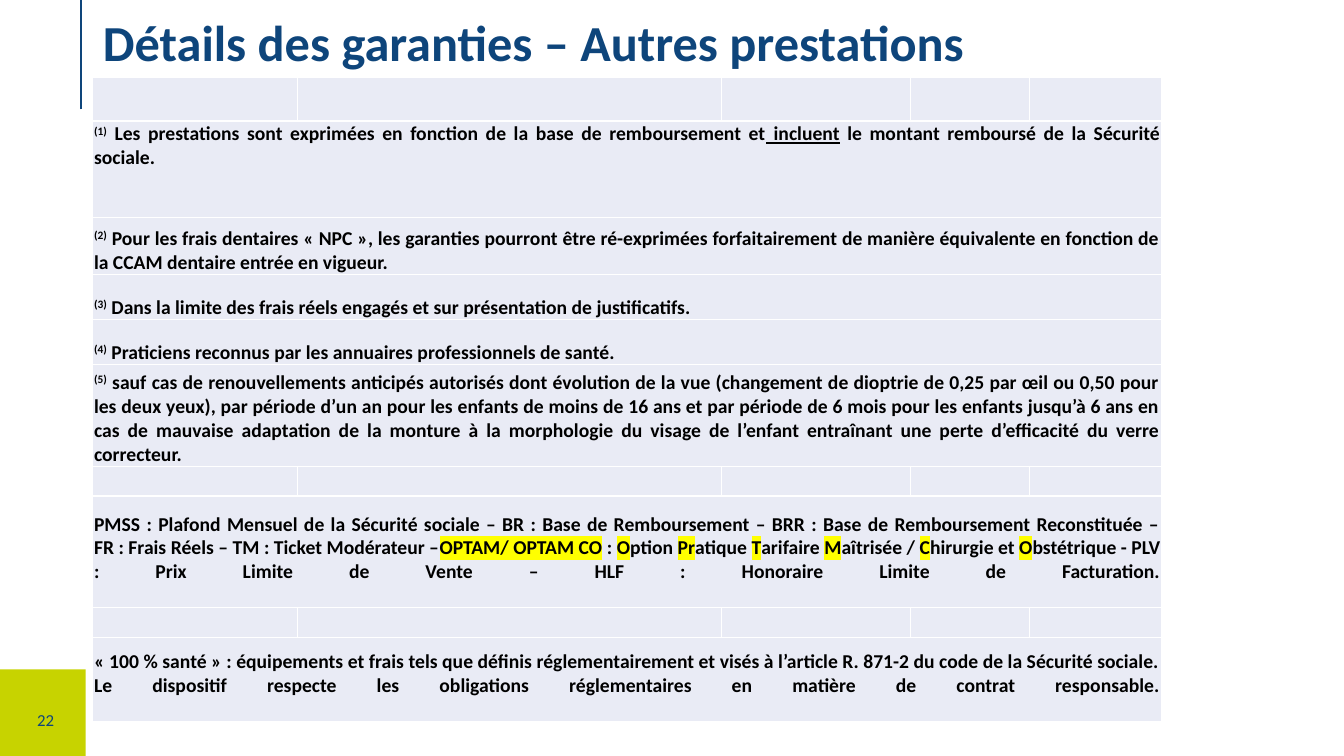
from copy import deepcopy
from lxml import etree
from pptx import Presentation
from pptx import util as u
from pptx.dml.color import RGBColor
from pptx.enum import shapes, text
from pptx.oxml.ns import qn

NAVY = RGBColor(0x0E, 0x45, 0x7B)
LIME = RGBColor(0xC7, 0xD3, 0x00)
PALE = RGBColor(0xE9, 0xEB, 0xF5)
BLACK = RGBColor(0, 0, 0)
WHITE = RGBColor(0xFF, 0xFF, 0xFF)
YELLOW = RGBColor(0xFF, 0xFF, 0)


def write(p, content, size=14, color=BLACK, bold=True, underline=None, base=None, highlight=None):
    """Add formatted text to a paragraph; each newline becomes a line break."""
    for i, line in enumerate(content.split("\n")):
        if i:
            p.add_line_break()
            p._p[-1].append(deepcopy(r._r.rPr))
        if not line:
            continue
        r = p.add_run()
        r.text = line
        f = r.font
        f.size, f.bold, f.underline = u.Pt(size), bold, underline
        f.color.rgb = color
        if base:
            r._r.rPr.set("baseline", str(base * 1000))
        if highlight:
            mark = etree.SubElement(r._r.rPr, qn("a:highlight"))
            etree.SubElement(mark, qn("a:srgbClr"), val=str(highlight))
        f.name = "Calibri"


def style_cell(cell):
    """Give a cell white 1 pt borders and the pale fill."""
    tcPr = cell._tc.get_or_add_tcPr()
    for side in ("a:lnL", "a:lnR", "a:lnT", "a:lnB"):
        ln = etree.SubElement(tcPr, qn(side), w=str(u.Pt(1)))
        fill = etree.SubElement(ln, qn("a:solidFill"))
        etree.SubElement(fill, qn("a:srgbClr"), val=str(WHITE))
    cell.fill.solid()
    cell.fill.fore_color.rgb = PALE
    cell.margin_left = cell.margin_right = cell.margin_top = u.Cm(0.03)
    cell.margin_bottom = 0


prs = Presentation()
prs.slide_width, prs.slide_height = u.Cm(33.87), u.Cm(19.05)
s = prs.slides.add_slide(prs.slide_layouts[5])

# Page marker and title rule
sp = s.shapes.add_shape(shapes.MSO_SHAPE.RECTANGLE, u.Cm(-0.03), u.Cm(16.87), u.Cm(2.19), u.Cm(2.18))
sp.shadow.inherit = False
sp.fill.solid()
sp.fill.fore_color.rgb = LIME
sp.line.fill.background()

rule = s.shapes.add_connector(shapes.MSO_CONNECTOR.STRAIGHT, u.Cm(2.04), u.Cm(2.76), u.Cm(2.04), 0)
rule.line.color.rgb = NAVY
rule.line.width = u.Pt(1.25)
etree.SubElement(rule._element.spPr, qn("a:effectLst"))

tf = s.shapes.add_textbox(u.Cm(0.3), u.Cm(17.58), u.Cm(1.7), u.Cm(1.14)).text_frame
tf.word_wrap = True
tf.vertical_anchor = text.MSO_ANCHOR.MIDDLE
p = tf.paragraphs[0]
p.alignment = text.PP_ALIGN.CENTER
write(p, "22", size=12, color=NAVY, bold=False)

# Title
title = s.shapes.title
title.left, title.top, title.width, title.height = u.Cm(2.34), u.Cm(0.33), u.Cm(24.84), u.Cm(1.63)
title.text_frame.auto_size = text.MSO_AUTO_SIZE.NONE
title.text_frame.vertical_anchor = text.MSO_ANCHOR.MIDDLE
p = title.text_frame.paragraphs[0]
p.alignment = text.PP_ALIGN.LEFT
p.line_spacing = 0.9
write(p, "Détails des garanties – Autres prestations", size=36, color=NAVY)

# Footnote table: each row is a height and its text pieces; rows without text keep five cells
sup, hl = {"base": 30}, {"highlight": YELLOW}
rows = [
    (1.09, []),
    (2.44, [("(1)", sup),
            (" Les prestations sont exprimées en fonction de la base de remboursement et", {}),
            (" incluent", {"underline": True}),
            (" le montant remboursé de la Sécurité sociale.", {})]),
    (1.42, [("(2)", sup),
            (" Pour les frais dentaires « NPC », les garanties pourront être ré-exprimées forfaitairement "
             "de manière équivalente en fonction de la CCAM dentaire entrée en vigueur.", {})]),
    (1.14, [("(3)", sup),
            (" Dans la limite des frais réels engagés et sur présentation de justificatifs.", {})]),
    (1.14, [("(4)", sup), (" Praticiens reconnus par les annuaires professionnels de santé.", {})]),
    (2.57, [("(5)", sup),
            (" sauf cas de renouvellements anticipés autorisés dont évolution de la vue (changement de "
             "dioptrie de 0,25 par œil ou 0,50 pour les deux yeux), par période d’un an pour les enfants "
             "de moins de 16 ans et par période de 6 mois pour les enfants jusqu’à 6 ans en cas de "
             "mauvaise adaptation de la monture à la morphologie du visage de l’enfant entraînant une "
             "perte d’efficacité du verre correcteur.", {})]),
    (0.74, []),
    (2.82, [("PMSS : Plafond Mensuel de la Sécurité sociale – BR : Base de Remboursement – BRR : Base de "
             "Remboursement Reconstituée –\nFR : Frais Réels – TM : Ticket Modérateur –", {}),
            ("OPTAM/ OPTAM CO", hl), (" : ", {}),
            ("O", hl), ("ption ", {}), ("Pr", hl), ("atique ", {}),
            ("T", hl), ("arifaire ", {}), ("M", hl), ("aîtrisée / ", {}),
            ("C", hl), ("hirurgie et ", {}), ("O", hl),
            ("bstétrique - PLV : Prix Limite de Vente – HLF : Honoraire Limite de Facturation.\n", {})]),
    (0.74, []),
    (2.13, [("« 100 % santé » : équipements et frais tels que définis réglementairement et visés à "
             "l’article R. 871-2 du code de la Sécurité sociale.\nLe dispositif respecte les obligations "
             "réglementaires en matière de contrat responsable.\n", {})]),
]
col_widths = [5.16, 10.69, 4.75, 3.0, 3.33]

table = s.shapes.add_table(len(rows), len(col_widths), u.Cm(2.34), u.Cm(1.96),
                           u.Cm(sum(col_widths)), u.Cm(sum(h for h, _ in rows))).table
table.first_row = table.horz_banding = False
for col, width in zip(table.columns, col_widths):
    col.width = u.Cm(width)

for i, (height, pieces) in enumerate(rows):
    table.rows[i].height = u.Cm(height)
    cells = list(table.rows[i].cells)
    for cell in cells:
        style_cell(cell)
    if pieces:
        cells[0].merge(cells[-1])
        cells[0].vertical_anchor = text.MSO_ANCHOR.TOP if i == 1 else text.MSO_ANCHOR.BOTTOM
        p = cells[0].text_frame.paragraphs[0]
        p.alignment = text.PP_ALIGN.JUSTIFY
        for content, look in pieces:
            write(p, content, **look)
    for cell in cells:
        etree.SubElement(cell.text_frame.paragraphs[0]._p, qn("a:endParaRPr"), sz="1400")

prs.save("out.pptx")
